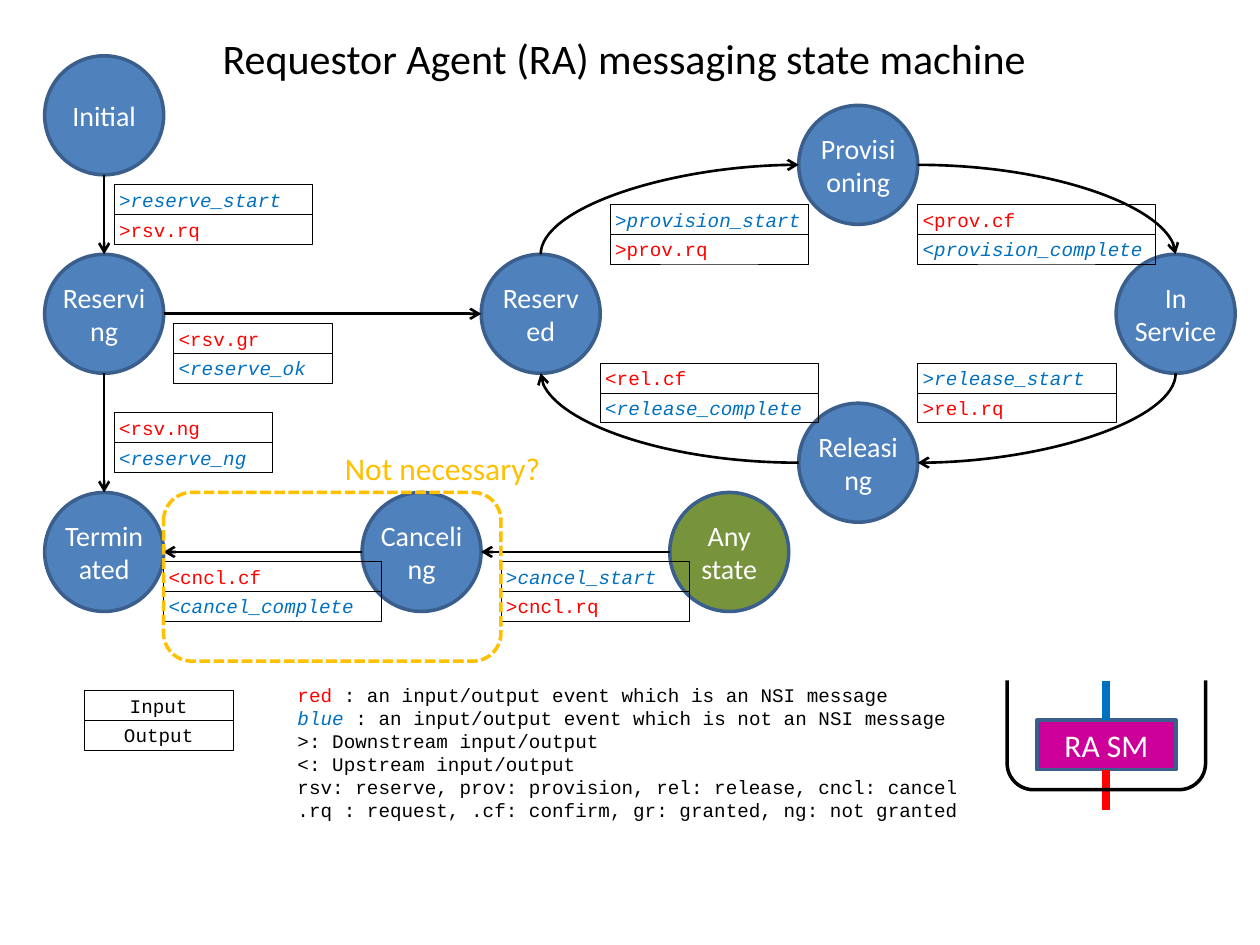
"""Build the slide showing the Requestor Agent messaging state machine."""
import pptx
import pptx.dml.color
import pptx.enum.dml
import pptx.enum.shapes
import pptx.enum.text
import pptx.oxml
import pptx.oxml.ns
import pptx.util

Pt = pptx.util.Pt
SHAPE = pptx.enum.shapes.MSO_SHAPE
CONNECTOR = pptx.enum.shapes.MSO_CONNECTOR
ALIGN = pptx.enum.text.PP_ALIGN
ANCHOR = pptx.enum.text.MSO_ANCHOR
AUTO_SIZE = pptx.enum.text.MSO_AUTO_SIZE
BLACK, WHITE, RED, BLUE = "000000", "FFFFFF", "FF0000", "0070C0"
STATE_FILL, ANY_FILL, OUTLINE = "4F81BD", "77933C", "3A5F8C"
MAGENTA, AMBER = "CC0099", "FFC000"
SIDES = {"top": (0.5, 0), "left": (0, 0.5), "bottom": (0.5, 1), "right": (1, 0.5)}


def rgb(value):
    """Turn a hex string into a colour."""
    return pptx.dml.color.RGBColor.from_string(value)


def side(shape, name):
    """Return the middle of one side of a shape."""
    across, down = SIDES[name]
    return (int(shape.left + across * shape.width), int(shape.top + down * shape.height))


class StateDiagram:
    """Hold the style and the slide, and draw each kind of element."""

    sans, mono = "Calibri", "Courier New"
    diameter, row_height = 68, 17

    def __init__(self, slide):
        """Keep the slide to draw on."""
        self.slide = slide

    def font(self, font, size, color, name=sans, italic=False):
        """Format one font."""
        font.name, font.size, font.italic = name, Pt(size), italic
        font.color.rgb = rgb(color)

    def label(self, shape, text, size, color, name=sans, italic=False,
              align=ALIGN.CENTER, inset=(0, 0), anchor=ANCHOR.MIDDLE, wrap=True):
        """Fill a shape with uniformly formatted text."""
        frame = shape.text_frame
        frame.text = text
        frame.word_wrap, frame.vertical_anchor = wrap, anchor
        frame.margin_left = frame.margin_right = Pt(inset[0])
        frame.margin_top = frame.margin_bottom = Pt(inset[1])
        for paragraph in frame.paragraphs:
            paragraph.alignment = align
            self.font(paragraph.font, size, color, name, italic)

    def box(self, kind, left, top, width, height, fill=None, line=None,
            weight=2, dash=None, parent=None):
        """Draw a preset shape."""
        shapes = (parent or self.slide).shapes
        shape = shapes.add_shape(kind, Pt(left), Pt(top), Pt(width), Pt(height))
        shape.shadow.inherit = False
        if fill:
            shape.fill.solid()
            shape.fill.fore_color.rgb = rgb(fill)
        else:
            shape.fill.background()
        if line:
            shape.line.color.rgb = rgb(line)
            shape.line.width = Pt(weight)
            if dash:
                shape.line.dash_style = dash
        else:
            shape.line.fill.background()
        return shape

    def title(self, text, left, top, width, height):
        """Place and format the title."""
        title = self.slide.shapes.title
        title.left, title.top, title.width, title.height = map(Pt, (left, top, width, height))
        self.label(title, text, 24, BLACK, inset=(7.2, 3.6), anchor=ANCHOR.TOP, wrap=False)

    def state(self, name, left, top, fill=STATE_FILL):
        """Draw one state circle."""
        circle = self.box(SHAPE.OVAL, left, top, self.diameter, self.diameter, fill, OUTLINE)
        self.label(circle, name, 16, WHITE)
        return circle

    def event(self, left, top, width, rows, align=ALIGN.LEFT):
        """Draw an input cell above an output cell."""
        group = self.slide.shapes.add_group_shape()
        for index, (text, color) in enumerate(rows):
            cell = self.box(SHAPE.RECTANGLE, left, top + index * self.row_height, width,
                            self.row_height, line=BLACK, weight=0.5, parent=group)
            self.label(cell, text, 11, color, self.mono, color == BLUE, align, (2.83, 0))

    def connector(self, kind, start, end, color=BLACK, weight=1.5, arrow=True):
        """Draw a connector without shadow."""
        line = self.slide.shapes.add_connector(kind, *start, *end)
        line.line.color.rgb = rgb(color)
        line.line.width = Pt(weight)
        properties = line._element.spPr
        if arrow:
            tail = pptx.oxml.parse_xml(
                f'<a:tailEnd {pptx.oxml.ns.nsdecls("a")} type="arrow"/>')
            properties.find(pptx.oxml.ns.qn("a:ln")).append(tail)
        properties.append(pptx.oxml.parse_xml(f'<a:effectLst {pptx.oxml.ns.nsdecls("a")}/>'))
        return line

    def arc(self, start, end, upright):
        """Draw a quarter-turn arrow, leaving vertically if upright."""
        if upright:
            middle_x, middle_y = (start[0] + end[0]) // 2, (start[1] + end[1]) // 2
            half_x, half_y = start[0] - middle_x, start[1] - middle_y
            start = (middle_x + half_y, middle_y - half_x)
            end = (middle_x - half_y, middle_y + half_x)
        properties = self.connector(CONNECTOR.CURVE, start, end)._element.spPr
        properties.find(pptx.oxml.ns.qn("a:prstGeom")).set("prst", "curvedConnector2")
        if upright:
            properties.find(pptx.oxml.ns.qn("a:xfrm")).set("rot", "5400000")

    def text_box(self, left, top, width, height):
        """Add an empty text box."""
        return self.slide.shapes.add_textbox(Pt(left), Pt(top), Pt(width), Pt(height))

    def legend(self, left, top, width, height, lines):
        """Set the notation key, one list of coloured runs a line."""
        frame = self.text_box(left, top, width, height).text_frame
        frame.word_wrap, frame.auto_size = True, AUTO_SIZE.SHAPE_TO_FIT_TEXT
        frame.margin_left = frame.margin_right = Pt(2.83)
        frame.margin_top = frame.margin_bottom = 0
        for index, runs in enumerate(lines):
            paragraph = frame.add_paragraph() if index else frame.paragraphs[0]
            for text, color in runs:
                run = paragraph.add_run()
                run.text = text
                target = run.font if len(runs) > 1 else paragraph.font
                self.font(target, 11, color, self.mono, color == BLUE)

    def note(self, text, left, top, width, height):
        """Set the amber remark."""
        remark = self.text_box(left, top, width, height)
        self.label(remark, text, 18, AMBER, align=ALIGN.LEFT, inset=(7.2, 3.6),
                   anchor=ANCHOR.TOP, wrap=False)
        remark.text_frame.auto_size = AUTO_SIZE.SHAPE_TO_FIT_TEXT


def main():
    """Draw the slide and save it."""
    deck = pptx.Presentation()
    deck.slide_width, deck.slide_height = Pt(720), Pt(540)
    diagram = StateDiagram(deck.slides.add_slide(deck.slide_layouts[5]))
    diagram.title("Requestor Agent (RA) messaging state machine", 118.3, 15.2, 477, 36)

    initial = diagram.state("Initial", 25.5, 31.9)
    reserving = diagram.state("Reserving", 25.5, 145.3)
    terminated = diagram.state("Terminated", 25.5, 281.4)
    reserved = diagram.state("Reserved", 275, 145.3)
    provisioning = diagram.state("Provisioning", 456.4, 60.2)
    in_service = diagram.state("In\nService", 637.8, 145.3)
    releasing = diagram.state("Releasing", 456.4, 230.4)
    canceling = diagram.state("Canceling", 206.9, 281.4)
    any_state = diagram.state("Any\nstate", 382.7, 281.4, ANY_FILL)

    for source, leaving, target, entering in (
            (initial, "bottom", reserving, "top"), (reserving, "bottom", terminated, "top"),
            (reserving, "right", reserved, "left"), (canceling, "left", terminated, "right"),
            (any_state, "left", canceling, "right")):
        diagram.connector(CONNECTOR.STRAIGHT, side(source, leaving), side(target, entering))
    for source, leaving, target, entering in (
            (reserved, "top", provisioning, "left"), (provisioning, "right", in_service, "top"),
            (in_service, "bottom", releasing, "right"), (releasing, "left", reserved, "bottom")):
        diagram.arc(side(source, leaving), side(target, entering), leaving in ("top", "bottom"))

    for left, top, width, request, message in (
            (65.2, 105.6, 113.4, ">reserve_start", ">rsv.rq"),
            (348.7, 116.9, 113.4, ">provision_start", ">prov.rq"),
            (524.4, 207.6, 113.4, ">release_start", ">rel.rq"),
            (286.3, 320.9, 107.7, ">cancel_start", ">cncl.rq")):
        diagram.event(left, top, width, ((request, BLUE), (message, RED)))
    for left, top, width, message, result in (
            (524.4, 116.9, 136, "<prov.cf", "<provision_complete"),
            (99.2, 184.9, 90.7, "<rsv.gr", "<reserve_ok"),
            (65.2, 235.9, 90.7, "<rsv.ng", "<reserve_ng"),
            (343, 207.6, 124.7, "<rel.cf", "<release_complete"),
            (93.5, 320.9, 124.7, "<cncl.cf", "<cancel_complete")):
        diagram.event(left, top, width, ((message, RED), (result, BLUE)))
    diagram.event(48.2, 394.6, 85, (("Input", BLACK), ("Output", BLACK)), ALIGN.CENTER)

    diagram.legend(167.2, 390.2, 499, 80, (
        (("red", RED), (" : an input/output event which is an NSI message", BLACK)),
        (("blue", BLUE), (" : an input/output event which is not an NSI message", BLACK)),
        ((">: Downstream input/output", BLACK),),
        (("<: Upstream input/output", BLACK),),
        (("rsv: reserve, prov: provision, rel: release, cncl: cancel", BLACK),),
        ((".rq : request, .cf: confirm, gr: granted, ng: not granted", BLACK),)))

    machine = diagram.box(SHAPE.RECTANGLE, 592.5, 411.6, 79.4, 28.3, MAGENTA, OUTLINE)
    diagram.label(machine, "RA SM", 18, WHITE, inset=(2.83, 2.83))
    for leaving, far_end, color, site in (("bottom", 462.6, RED, 2), ("top", 388.9, BLUE, 0)):
        edge = side(machine, leaving)
        link = diagram.connector(CONNECTOR.STRAIGHT, edge, (edge[0], Pt(far_end)),
                                 color, 4.5, arrow=False)
        link.begin_connect(machine, site)
    diagram.box(SHAPE.ROUNDED_RECTANGLE, 575.5, 360.6, 113.4, 90.7, line=BLACK)
    diagram.box(SHAPE.RECTANGLE, 564.1, 354.9, 136, 34, WHITE)

    diagram.box(SHAPE.ROUNDED_RECTANGLE, 93.5, 281.4, 192.8, 96.4, line=AMBER,
                dash=pptx.enum.dml.MSO_LINE.SQUARE_DOT)
    diagram.note("Not necessary?", 190, 252.9, 127.5, 29)
    deck.save("out.pptx")


if __name__ == "__main__":
    main()
